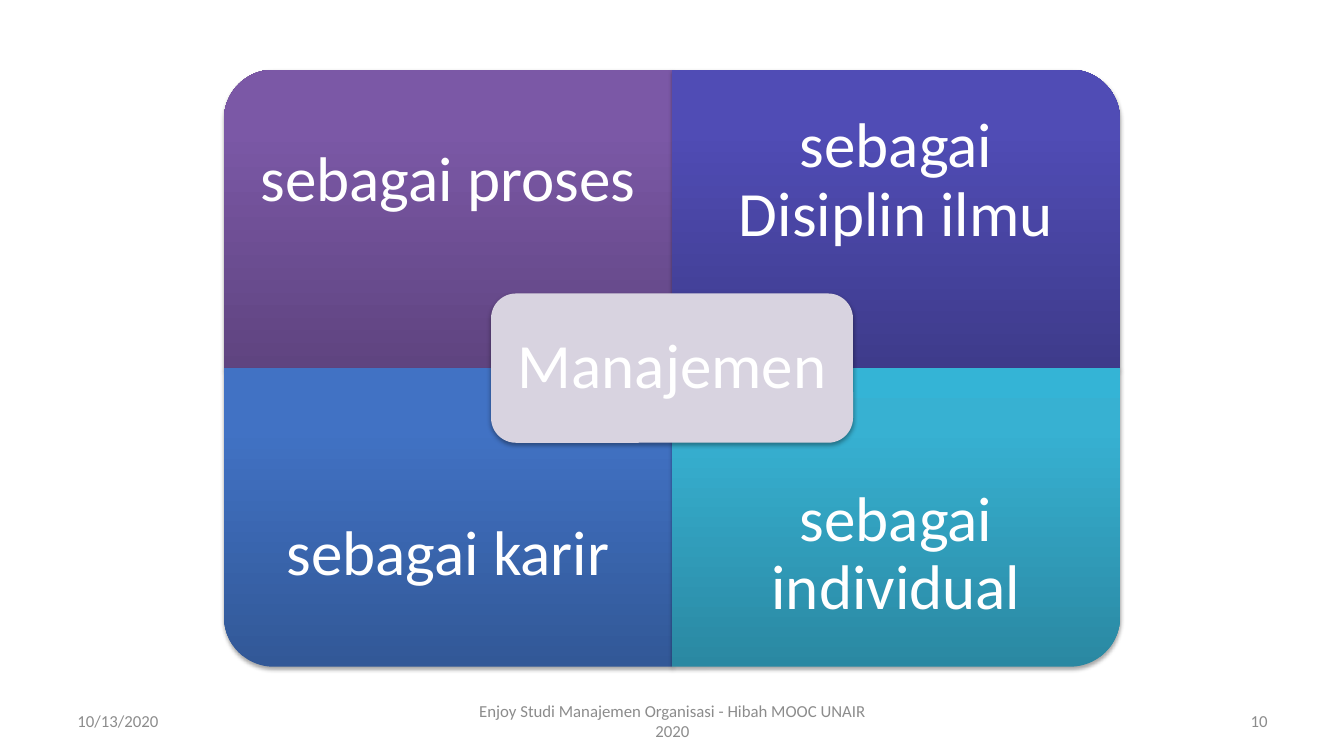
from copy import deepcopy

from lxml.etree import SubElement
from pptx import Presentation
from pptx.dml.color import RGBColor
from pptx.enum.shapes import MSO_SHAPE as Geo
from pptx.enum.text import MSO_ANCHOR as Anchor, PP_ALIGN as Align
from pptx.oxml.ns import qn
from pptx.util import Inches, Pt

WIDE, HIGH = 13.33, 7.5
COL = WIDE / 6
ROW = COL / 3
TOP = 0.69


def tint(code):
    """Turn a hex string into a colour."""
    return RGBColor.from_string(code)


def write(frame, text, size=45, color="FFFFFF", align=Align.CENTER,
          pad=(0.1, 0.05), lead=None):
    """Put formatted text into a frame."""
    frame.word_wrap = True
    frame.vertical_anchor = Anchor.MIDDLE
    frame.margin_left = frame.margin_right = Inches(pad[0])
    frame.margin_top = frame.margin_bottom = Inches(pad[1])
    para = frame.paragraphs[0]
    para.alignment = align
    para.line_spacing = lead
    run = para.add_run()
    run.text = text
    run.font.name = "Calibri"
    run.font.size = Pt(size)
    run.font.color.rgb = tint(color)


class Deck:
    """Hold the grid style and the current slide."""

    def __init__(self):
        """Open a blank slide."""
        self.show = Presentation()
        self.show.slide_width = Inches(WIDE)
        self.show.slide_height = Inches(HIGH)
        self.slide = self.show.slides.add_slide(self.show.slide_layouts[6])

    def text(self, x, y, w, h, text, **form):
        """Add a text box, placed in inches."""
        box = self.slide.shapes.add_textbox(*map(Inches, (x, y, w, h)))
        write(box.text_frame, text, **form)

    def shape(self, geo, x, y, w, h):
        """Add a lineless shape with a soft shadow."""
        item = self.slide.shapes.add_shape(geo, *map(Inches, (x, y, w, h)))
        item.line.fill.background()
        item.shadow.inherit = False
        glow = SubElement(item._element.spPr.find(qn("a:effectLst")),
                          qn("a:outerShdw"), blurRad="40000", dist="23000",
                          dir="5400000", rotWithShape="0")
        shade = SubElement(glow, qn("a:srgbClr"), val="000000")
        SubElement(shade, qn("a:alpha"), val="35000")
        return item

    def tile(self, col, row, turn, stops, text):
        """Add a quadrant, its round corner turned outward, and its label."""
        w, h = 2 * COL, 4 * ROW
        x, y = COL + col * w, TOP + row * h
        wide, high = (h, w) if turn % 180 else (w, h)
        item = self.shape(Geo.ROUND_1_RECTANGLE, x + (w - wide) / 2,
                          y + (h - high) / 2, wide, high)
        item.rotation = turn
        self.blend(item, stops)
        self.text(x, y + row * ROW, w, 3 * ROW, text,
                  pad=(0.35, 0.35), lead=0.9)

    def blend(self, item, stops):
        """Fill a shape with an upright gradient, first colour lowest."""
        item.fill.gradient()
        grad = item._element.spPr.find(qn("a:gradFill"))
        grad.set("rotWithShape", "0")
        marks = grad.find(qn("a:gsLst"))
        marks.append(deepcopy(marks[0]))
        item.fill.gradient_angle = 90
        for stop, place, code in zip(item.fill.gradient_stops,
                                     (0, 0.8, 1), stops):
            stop.position = place
            stop.color.rgb = tint(code)

    def hub(self, w, text):
        """Add the centre box over the meeting point of the tiles."""
        item = self.shape(Geo.ROUNDED_RECTANGLE, (WIDE - w) / 2,
                          TOP + 3 * ROW, w, 2 * ROW)
        item.fill.solid()
        item.fill.fore_color.rgb = tint("D8D3E0")
        write(item.text_frame, text, pad=(0.19, 0.19), lead=0.9)


def main():
    """Build and save the slide."""
    deck = Deck()
    feet = [
        (0.67, 3.11, "10/13/2020", Align.LEFT),
        (4.56, 4.22, "Enjoy Studi Manajemen Organisasi - Hibah MOOC UNAIR 2020",
         Align.CENTER),
        (9.56, 3.11, "10", Align.RIGHT),
    ]
    for x, w, text, align in feet:
        deck.text(x, 6.95, w, 0.4, text, size=12, color="8C8C8C", align=align)
    tiles = [
        (0, 0, 270, ("5F4480", "7B58A6", "7C57A8"), "sebagai proses"),
        (1, 0, 0, ("3E3B8B", "504CB5", "4F4BB8"), "sebagai Disiplin ilmu"),
        (0, 1, 180, ("325897", "4172C4", "3F72C7"), "sebagai karir"),
        (1, 1, 90, ("2A88A2", "37B1D2", "34B4D6"), "sebagai individual"),
    ]
    for tile in tiles:
        deck.tile(*tile)
    deck.hub(3.59, "Manajemen")
    deck.show.save("out.pptx")


if __name__ == "__main__":
    main()
